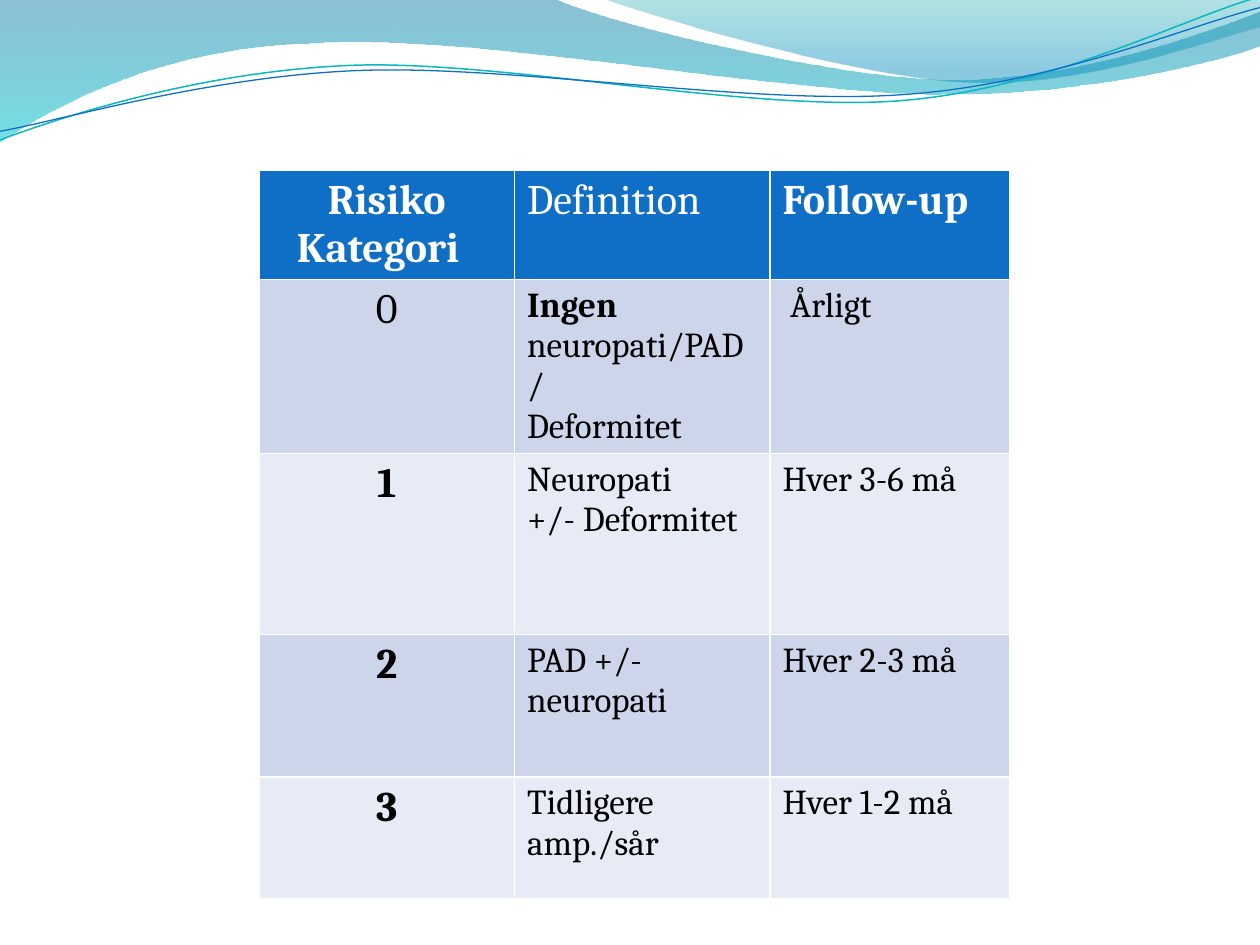
from itertools import product
from lxml.etree import SubElement
from pptx import Presentation
from pptx.dml.color import RGBColor
from pptx.enum.text import PP_ALIGN
from pptx.oxml.ns import qn
from pptx.util import Pt

WHITE = RGBColor(0xFF, 0xFF, 0xFF)
BLACK = RGBColor(0x00, 0x00, 0x00)
BLUE = RGBColor(0x0F, 0x6F, 0xC6)
TEAL = RGBColor(0x0A, 0xB8, 0xBF)
BAND_DARK = RGBColor(0xCC, 0xD5, 0xEA)
BAND_LIGHT = RGBColor(0xE7, 0xEB, 0xF5)
DEEP_BLUE = RGBColor(0x00, 0x74, 0xA1)
CYAN = RGBColor(0x00, 0xC6, 0xCF)
SEA = RGBColor(0x00, 0xA1, 0xA9)
SKY = RGBColor(0x00, 0x8B, 0xBF)

WIDE_WAVE = [
    (0, 0), (316.8, -0.7),
    (342.7, 12.2, 478.1, 45.4, 545.8, 45.4),
    (614.2, 45.4, 689.8, 18.7, 720, 6.5),
    (720.7, 25.9),
    (707.8, 31.7, 626.4, 54.7, 537.1, 54),
    (447.8, 54, 275, 20.2, 185, 24.5),
    (92.9, 25.9, 33.1, 59.8, -0.7, 81.4),
    (0, 0),
]
RIGHT_WAVE = [
    (344.9, -0.7),
    (366.5, 7.9, 491, 44.6, 553.7, 46.8),
    (616.3, 49.7, 691.9, 23, 720, 15.1),
    (720, 0),
    (344.9, -0.7),
]
TEAL_CURVE = [
    (-1.4, 63),
    (33.8, 51.7, 114.1, 29.4, 199.8, 29.9),
    (284.8, 30.3, 425.8, 67.3, 512.4, 64.9),
    (599, 62.4, 676.5, 25.7, 720.2, 15.5),
]
BLUE_CURVE = [
    (-1.1, 58),
    (32.9, 53.8, 118.3, 32.5, 204.1, 33),
    (290.6, 33.4, 428.9, 63.8, 515.5, 61.4),
    (601.3, 59.6, 678.5, 30.1, 721.4, 21.3),
]
TILT = -2.7

COLUMNS = [146, 146, 137]
ROWS = [62, 89, 103.5, 81.5, 69.5]
HEADER = [["Risiko", "Kategori"], ["Definition"], ["Follow-up"]]
RISKS = [
    [["0"], [("Ingen ", "neuropati/PAD/"), "Deformitet"], [" Årligt"]],
    [["1"], ["Neuropati", "+/- Deformitet"], ["Hver 3-6 må"]],
    [["2"], ["PAD +/- neuropati"], ["Hver 2-3 må"]],
    [["3"], ["Tidligere amp./sår"], ["Hver 1-2 må"]],
]


class RiskPage:
    font = "Cambria"
    large = Pt(24)
    small = Pt(20)

    def __init__(self, deck):
        self.page = deck.slides.add_slide(deck.slide_layouts[6])

    def outline(self, segments, close):
        points = [(Pt(x), Pt(y)) for segment in segments
                  for x, y in zip(segment[::2], segment[1::2])]
        builder = self.page.shapes.build_freeform(*points[0])
        builder.add_line_segments(points[1:], close=close)
        shape = builder.convert_to_shape()
        shape.shadow.inherit = False
        steps = iter(list(shape._element.iter(qn("a:lnTo"))))
        for segment in segments[1:]:
            step = next(steps)
            if len(segment) == 6:
                step.tag = qn("a:cubicBezTo")
                for extra in (next(steps), next(steps)):
                    step.append(extra[0])
                    extra.getparent().remove(extra)
        return shape

    def wave(self, segments, stops):
        shape = self.outline(segments, True)
        shape.line.fill.background()
        shape.fill.gradient()
        shape.fill.gradient_angle = 270
        for stop, (position, color, opacity) in zip(shape.fill.gradient_stops, stops):
            stop.position = position
            stop.color.rgb = color
        colors = shape._element.spPr.iter(qn("a:srgbClr"))
        for element, (position, color, opacity) in zip(colors, stops):
            SubElement(element, qn("a:alpha")).set("val", str(opacity * 1000))

    def curve(self, segments, color, width):
        shape = self.outline(segments, False)
        shape.rotation = TILT
        shape.fill.background()
        shape.line.color.rgb = color
        shape.line.width = Pt(width)

    def border(self, cell):
        properties = cell._tc.get_or_add_tcPr()
        for index, side in enumerate(("lnL", "lnR", "lnT", "lnB")):
            line = properties.makeelement(qn(f"a:{side}"), {"w": str(Pt(1))})
            fill = SubElement(line, qn("a:solidFill"))
            SubElement(fill, qn("a:srgbClr")).set("val", str(WHITE))
            properties.insert(index, line)

    def cell(self, cell, lines, fill, color, size, bold, centred):
        cell.fill.solid()
        cell.fill.fore_color.rgb = fill
        self.border(cell)
        for index, line in enumerate(lines):
            frame = cell.text_frame
            para = frame.add_paragraph() if index else frame.paragraphs[0]
            if centred:
                para.alignment = PP_ALIGN.CENTER
            if line == "Kategori":
                para._p.get_or_add_pPr().set("marR", str(Pt(10)))
            parts = (line,) if isinstance(line, str) else line
            for position, text in enumerate(parts):
                span = para.add_run()
                span.text = text
                span.font.name = self.font
                span.font.size = size
                span.font.color.rgb = color
                span.font.bold = bold or (len(parts) > 1 and position == 0)

    def table(self, left, top):
        contents = [HEADER] + RISKS
        table = self.page.shapes.add_table(
            len(ROWS), len(COLUMNS), Pt(left), Pt(top),
            Pt(sum(COLUMNS)), Pt(sum(ROWS))).table
        for column, width in zip(table.columns, COLUMNS):
            column.width = Pt(width)
        for row, height in zip(table.rows, ROWS):
            row.height = Pt(height)
        for row, column in product(range(len(ROWS)), range(len(COLUMNS))):
            header = row == 0
            category = column == 0
            band = BAND_DARK if row % 2 else BAND_LIGHT
            self.cell(
                table.cell(row, column), contents[row][column],
                fill=BLUE if header else band,
                color=WHITE if header else BLACK,
                size=self.large if header or category else self.small,
                bold=column != 1 if header else category and row > 1,
                centred=category)


def main():
    deck = Presentation()
    deck.slide_width, deck.slide_height = Pt(720), Pt(540)
    page = RiskPage(deck)
    page.wave(WIDE_WAVE, [(0, DEEP_BLUE, 45), (1, CYAN, 55)])
    page.wave(RIGHT_WAVE, [(0, SEA, 30), (0.8, SKY, 45)])
    page.curve(TEAL_CURVE, TEAL, 0.85)
    page.curve(BLUE_CURVE, BLUE, 0.75)
    page.table(148, 97.25)
    deck.save("out.pptx")


if __name__ == "__main__":
    main()
